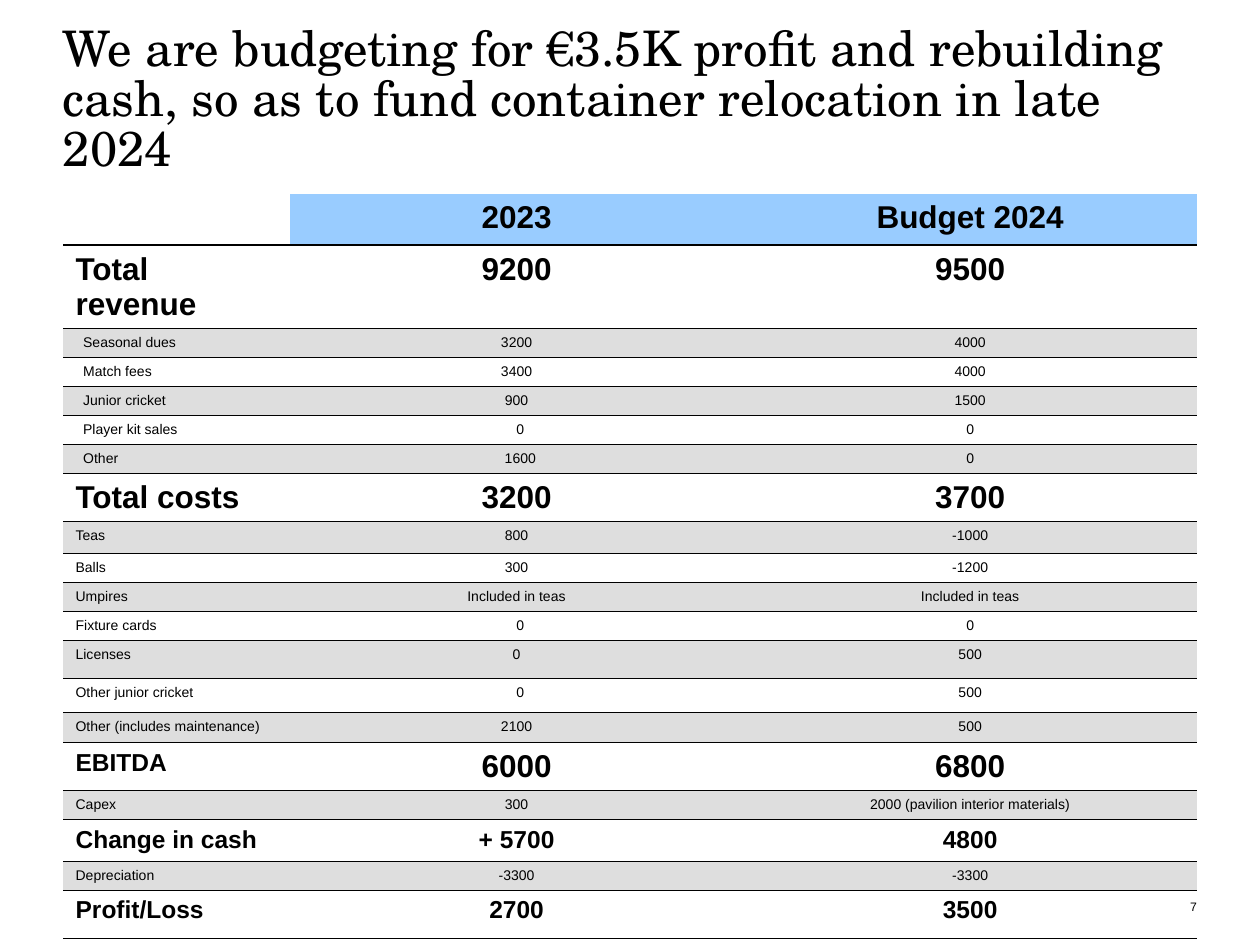
"""Build the club budget slide: a headline, a 2023 / 2024 table and a page number."""
from lxml import etree
from pptx import Presentation
from pptx import util as u
from pptx.dml import color as c
from pptx.enum import text as t
from pptx.oxml import ns


def hex_color(value):
    return c.RGBColor.from_string(value)


def write(frame, content, size=8, bold=False, font="Arial", align=t.PP_ALIGN.LEFT, spacing=None):
    frame.word_wrap = True
    paragraph = frame.paragraphs[0]
    paragraph.alignment = align
    paragraph.line_spacing = spacing
    run = paragraph.add_run()
    run.text = content
    run.font.size = u.Pt(size)
    run.font.bold = bold
    run.font.name = font
    run.font.color.rgb = hex_color("000000")


presentation = Presentation()
presentation.slide_width = u.Inches(10)
presentation.slide_height = u.Inches(7.5)
slide = presentation.slides.add_slide(presentation.slide_layouts[6])

WIDTH, HEIGHT = presentation.slide_width, presentation.slide_height
MARGIN = int(WIDTH * 0.05)
CONTENT = WIDTH - 2 * MARGIN
COLUMN = CONTENT // 5
INDENT = u.Inches(0.16)

HEADLINE = ("We are budgeting for €3.5K profit and rebuilding cash, "
            "so as to fund container relocation in late 2024")
texts = [
    (MARGIN, MARGIN, CONTENT, int(HEIGHT * 0.12), HEADLINE,
     dict(size=28, font="TeX Gyre Schola", spacing=0.85)),
    (MARGIN + 4 * COLUMN, u.Inches(7.1), COLUMN, int(HEIGHT * 0.02), "7",
     dict(size=7, align=t.PP_ALIGN.RIGHT)),
]

rows = [
    (0.32, 18, 18, "", "2023", "Budget 2024", ()),
    (0.33, 18, 18, "Total revenue", "9200", "9500", ()),
    (0.23, 8, 8, "Seasonal dues", "3200", "4000", (0,)),
    (0.23, 8, 8, "Match fees", "3400", "4000", (0,)),
    (0.23, 8, 8, "Junior cricket", "900", "1500", (0,)),
    (0.23, 8, 8, "Player kit sales", "0", "0", (0, 1)),
    (0.23, 8, 8, "Other", "1600", "0", (0, 1)),
    (0.33, 18, 18, "Total costs", "3200", "3700", ()),
    (0.26, 8, 8, "Teas", "800", "-1000", ()),
    (0.23, 8, 8, "Balls", "300", "-1200", ()),
    (0.23, 8, 8, "Umpires", "Included in teas", "Included in teas", ()),
    (0.23, 8, 8, "Fixture cards", "0", "0", (1,)),
    (0.30, 8, 8, "Licenses", "0", "500", ()),
    (0.27, 8, 8, "Other junior cricket", "0", "500", (1,)),
    (0.24, 8, 8, "Other (includes maintenance)", "2100", "500", ()),
    (0.33, 14, 18, "EBITDA", "6000", "6800", ()),
    (0.23, 8, 8, "Capex", "300", "2000 (pavilion interior materials)", ()),
    (0.33, 14, 14, "Change in cash", "+ 5700", "4800", ()),
    (0.23, 8, 8, "Depreciation", "-3300", "-3300", ()),
    (0.38, 14, 14, "Profit/Loss", "2700", "3500", ()),
]

table_height = u.Inches(sum(row[0] for row in rows))
table = slide.shapes.add_table(len(rows), 3, MARGIN, u.Inches(1.54), CONTENT, table_height).table
table.first_row = table.horz_banding = False
for column, share in zip(table.columns, (1, 2, 2)):
    column.width = share * COLUMN

for row_index, (height, label_size, value_size, *contents, indented) in enumerate(rows):
    table.rows[row_index].height = u.Inches(height)
    for column_index, content in enumerate(contents):
        cell = table.cell(row_index, column_index)
        size = value_size if column_index else label_size
        align = t.PP_ALIGN.CENTER if column_index else t.PP_ALIGN.LEFT
        if content:
            write(cell.text_frame, content, size=size, bold=size > 8, align=align)
        if column_index in indented:
            cell.margin_left = INDENT

        cell.fill.background()
        if row_index % 2 == 0 and content:
            cell.fill.solid()
            cell.fill.fore_color.rgb = hex_color("DEDEDE" if row_index else "99CCFF")

        top = {0: 0, 1: 1.5}.get(row_index, 0.5)
        bottom = 0.5 if row_index else 1.5
        properties = cell._tc.get_or_add_tcPr()
        for position, (edge, points) in enumerate(
                (("lnL", 0), ("lnR", 0), ("lnT", top), ("lnB", bottom))):
            line = etree.Element(ns.qn(f"a:{edge}"), w=str(int(u.Pt(points))))
            if points:
                fill = etree.SubElement(line, ns.qn("a:solidFill"))
                etree.SubElement(fill, ns.qn("a:srgbClr"), val="000000")
            else:
                etree.SubElement(line, ns.qn("a:noFill"))
            properties.insert(position, line)

for left, top, width, height, content, style in texts:
    frame = slide.shapes.add_textbox(left, top, width, height).text_frame
    frame.margin_left = frame.margin_right = frame.margin_top = frame.margin_bottom = 0
    frame.vertical_anchor = t.MSO_ANCHOR.BOTTOM
    write(frame, content, **style)

presentation.save("out.pptx")
